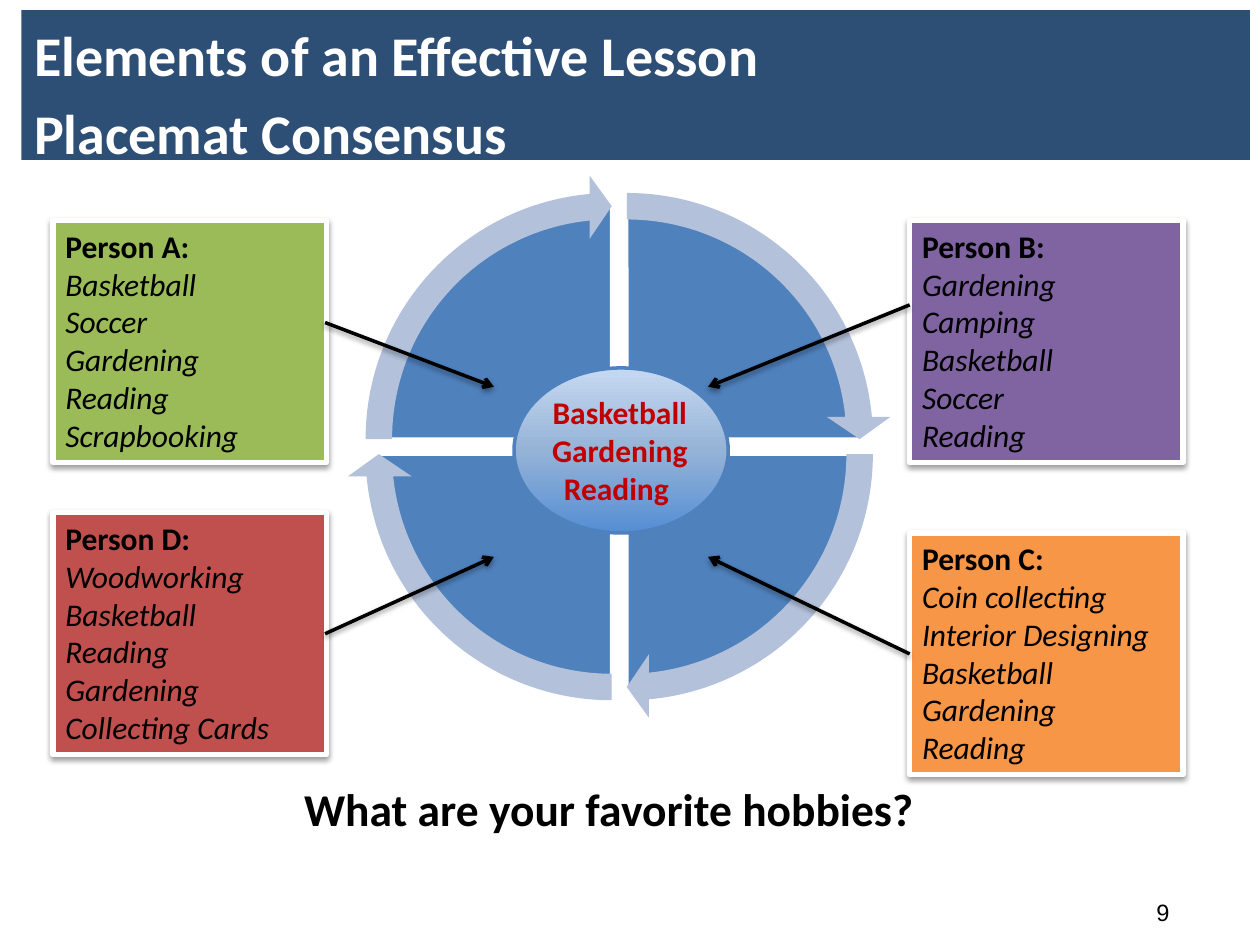
from typing import NamedTuple

from lxml import etree
from pptx import Presentation
from pptx import util as u
from pptx.dml.color import RGBColor
from pptx.enum import shapes, text
from pptx.oxml import ns, parse_xml

COLORS = {
    "white": "FFFFFF", "black": "000000", "navy": "2D4E75", "blue": "4F81BD",
    "pale_blue": "B3C1DB", "green": "9BBB59", "purple": "8064A2",
    "orange": "F79646", "red": "C0504D", "dark_red": "C00000",
    "gradient_top": "C6D9F1", "gradient_middle": "95B3D7", "gradient_bottom": "558ED5",
}
QUARTER_TURN, FULL_TURN = 54, 216
PIE_SIZE, ARROW_SIZE = 3.73, 4.2
PIE_LEFT, PIE_TOP, PIE_GAP = 2.99, 1.62, 0.12


class Person(NamedTuple):
    name: str
    color: str
    left: float
    top: float
    hobbies: list[str]


class Pointer(NamedTuple):
    start: tuple[float, float]
    end: tuple[float, float]


PEOPLE = [
    Person("A", "green", 0.42, 1.75,
           ["Basketball", "Soccer", "Gardening", "Reading", "Scrapbooking"]),
    Person("B", "purple", 7.22, 1.75,
           ["Gardening", "Camping", "Basketball", "Soccer", "Reading"]),
    Person("C", "orange", 7.22, 4.23,
           ["Coin collecting", "Interior Designing", "Basketball", "Gardening", "Reading"]),
    Person("D", "red", 0.42, 4.07,
           ["Woodworking", "Basketball", "Reading", "Gardening", "Collecting Cards"]),
]
POINTERS = [
    Pointer((2.58, 2.56), (3.92, 3.07)),
    Pointer((2.58, 5.03), (3.92, 4.42)),
    Pointer((7.22, 5.19), (5.62, 4.42)),
    Pointer((7.22, 2.42), (5.62, 3.07)),
]


def rgb(name: str) -> RGBColor:
    return RGBColor.from_string(COLORS[name])


def add_shadow(shape) -> None:
    properties = shape._element.spPr
    effects = properties.find(ns.qn("a:effectLst"))
    if effects is None:
        effects = etree.SubElement(properties, ns.qn("a:effectLst"))
    effects.append(parse_xml(
        f'<a:outerShdw {ns.nsdecls("a")} blurRad="40000" dist="20000" dir="5400000" '
        f'rotWithShape="0"><a:srgbClr val="{COLORS["black"]}"><a:alpha val="38000"/>'
        '</a:srgbClr></a:outerShdw>'))


def add_shape(slide, kind, left: float, top: float, width: float, height: float,
              fill: str, line: str | None = None, points: float = 2):
    shape = slide.shapes.add_shape(
        kind, u.Inches(left), u.Inches(top), u.Inches(width), u.Inches(height))
    shape.shadow.inherit = False
    shape.fill.solid()
    shape.fill.fore_color.rgb = rgb(fill)
    if line:
        shape.line.color.rgb = rgb(line)
        shape.line.width = u.Pt(points)
    else:
        shape.line.fill.background()
    return shape


def set_text(shape, content: str, size: float, color: str, bold: bool = False,
             align=text.PP_ALIGN.LEFT, font: str = "Calibri") -> None:
    frame = shape.text_frame
    frame.text = content
    frame.vertical_anchor = text.MSO_ANCHOR.TOP
    frame.word_wrap = True
    for paragraph in frame.paragraphs:
        paragraph.alignment = align
        for run in paragraph.runs:
            run.font.name = font
            run.font.size = u.Pt(size)
            run.font.bold = bold
            run.font.color.rgb = rgb(color)


def add_text(slide, left: float, top: float, width: float, height: float, *args, **style):
    box = slide.shapes.add_textbox(
        u.Inches(left), u.Inches(top), u.Inches(width), u.Inches(height))
    set_text(box, *args, **style)
    return box


def add_title(slide) -> None:
    title = slide.shapes.title
    title.left, title.top = u.Inches(0.17), u.Inches(0.08)
    title.width, title.height = u.Inches(9.75), u.Inches(1.19)
    title.fill.solid()
    title.fill.fore_color.rgb = rgb("navy")
    set_text(title, "Elements of an Effective Lesson\nPlacemat Consensus", 32, "white", bold=True)
    title.text_frame.auto_size = text.MSO_AUTO_SIZE.NONE
    title.text_frame.margin_top = u.Inches(0.08)
    title.text_frame.paragraphs[1].space_before = u.Pt(6.4)


def add_cycle(slide) -> None:
    quarters = []
    for index, (column, row) in enumerate([(1, 0), (1, 1), (0, 1), (0, 0)]):
        start = (3 + index) * QUARTER_TURN % FULL_TURN
        left, top = PIE_LEFT + column * PIE_GAP, PIE_TOP + row * PIE_GAP
        quarters.append((start, left, top))
    for start, left, top in quarters:
        pie = add_shape(slide, shapes.MSO_SHAPE.PIE, left, top, PIE_SIZE, PIE_SIZE,
                        "blue", "white")
        pie.adjustments[0] = start
        pie.adjustments[1] = (start + QUARTER_TURN) % FULL_TURN
    offset = (ARROW_SIZE - PIE_SIZE) / 2
    for start, left, top in quarters:
        arrow = add_shape(slide, shapes.MSO_SHAPE.CIRCULAR_ARROW, left - offset, top - offset,
                          ARROW_SIZE, ARROW_SIZE, "pale_blue")
        for index, value in enumerate([0.05, 3.28, start + 50.73, start, 0.06]):
            arrow.adjustments[index] = value


def add_consensus(slide) -> None:
    oval = add_shape(slide, shapes.MSO_SHAPE.OVAL, 4.08, 2.92, 1.7, 1.31,
                     "gradient_middle", "blue")
    stops = "".join(
        f'<a:gs pos="{position}"><a:srgbClr val="{COLORS[name]}"/></a:gs>'
        for position, name in [(0, "gradient_top"), (50000, "gradient_middle"),
                               (100000, "gradient_bottom")])
    properties = oval._element.spPr
    properties.replace(properties.find(ns.qn("a:solidFill")), parse_xml(
        f'<a:gradFill {ns.nsdecls("a")} rotWithShape="1"><a:gsLst>{stops}</a:gsLst>'
        '<a:lin ang="5400000" scaled="0"/></a:gradFill>'))


def add_person(slide, person: Person) -> None:
    box = add_shape(slide, shapes.MSO_SHAPE.RECTANGLE, person.left, person.top, 2.17, 1.92,
                    person.color, "white", 3)
    add_shadow(box)
    set_text(box, "\n".join([f"Person {person.name}:", *person.hobbies]), 18, "black")
    heading, *hobbies = box.text_frame.paragraphs
    heading.runs[0].font.bold = True
    for hobby in hobbies:
        hobby.runs[0].font.italic = True


def add_pointer(slide, pointer: Pointer) -> None:
    ends = [u.Inches(value) for value in (*pointer.start, *pointer.end)]
    connector = slide.shapes.add_connector(shapes.MSO_CONNECTOR.STRAIGHT, *ends)
    connector.line.color.rgb = rgb("black")
    connector.line.width = u.Pt(2)
    line = connector._element.spPr.find(ns.qn("a:ln"))
    etree.SubElement(line, ns.qn("a:tailEnd"), type="arrow")
    add_shadow(connector)


def main() -> None:
    presentation = Presentation()
    presentation.slide_width, presentation.slide_height = u.Inches(10), u.Inches(7.5)
    slide = presentation.slides.add_slide(presentation.slide_layouts[5])
    add_title(slide)
    add_text(slide, 9.08, 7.08, 0.43, 0.33, "9", 13.5, "black", font="Arial")
    add_cycle(slide)
    add_text(slide, 0.22, 6.15, 9.23, 0.54, "What are your favorite hobbies?", 26, "black",
             bold=True, align=text.PP_ALIGN.CENTER)
    add_consensus(slide)
    for person in PEOPLE:
        add_person(slide, person)
    add_text(slide, 4.22, 3.07, 1.4, 1.01, "Basketball\nGardening\nReading ", 18, "dark_red",
             bold=True, align=text.PP_ALIGN.CENTER)
    for pointer in POINTERS:
        add_pointer(slide, pointer)
    presentation.save("out.pptx")


if __name__ == "__main__":
    main()
